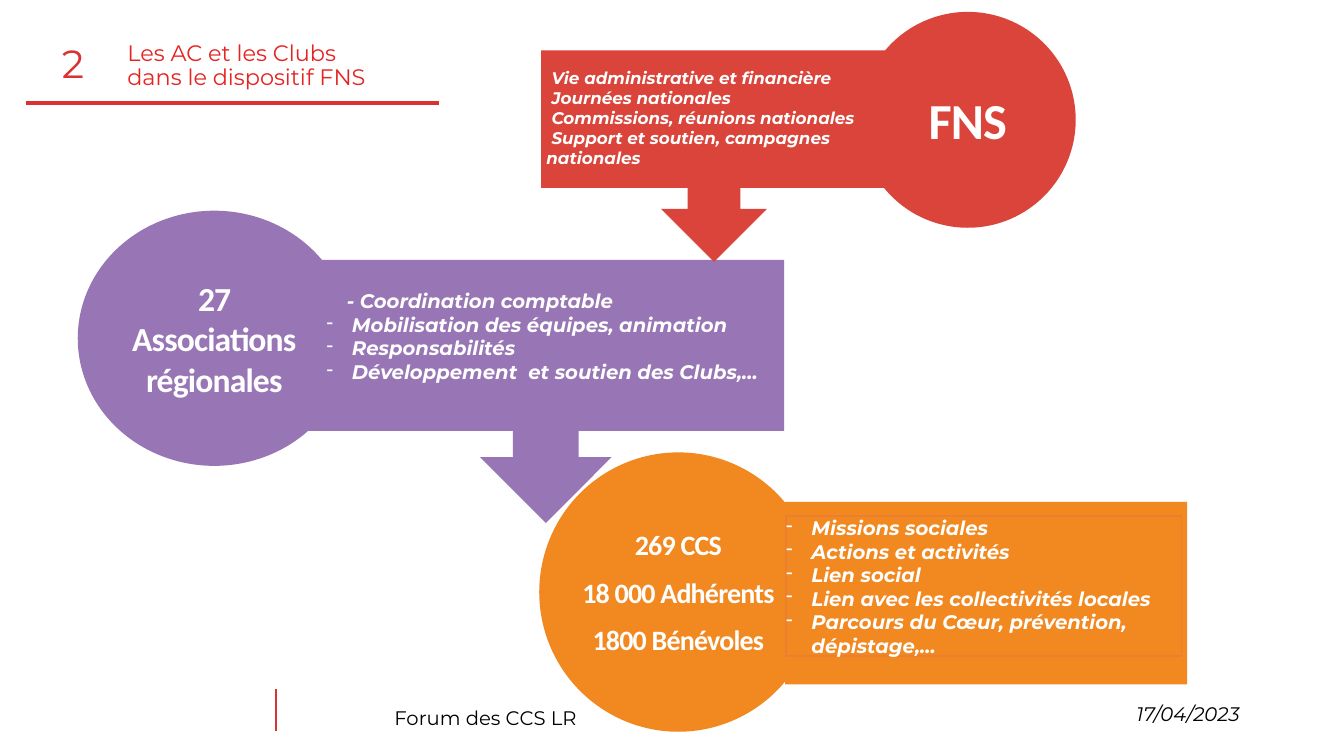
from lxml.etree import SubElement
from pptx import Presentation
from pptx.dml.color import RGBColor
from pptx.enum.shapes import MSO_CONNECTOR, MSO_SHAPE
from pptx.enum.text import MSO_ANCHOR, MSO_AUTO_SIZE, PP_ALIGN
from pptx.oxml.ns import qn
from pptx.util import Cm, Pt

COLOURS = {
    "white": "FFFFFF",
    "black": "000000",
    "rule": "DA3232",
    "title": "E52321",
    "orange": "F18820",
    "outline": "ED7D31",
    "purple": "9876B5",
    "red": "DA443A",
}


def add_block(kind, box, colour):
    shape = slide.shapes.add_shape(kind, *[Cm(length) for length in box])
    shape.shadow.inherit = False
    shape.fill.solid()
    shape.fill.fore_color.rgb = RGBColor.from_string(COLOURS[colour])
    shape.line.fill.background()
    return shape


def write_text(shape, lines, size, colour="white", font="Montserrat", bold=False, italic=False,
               align=PP_ALIGN.LEFT, anchor=MSO_ANCHOR.TOP, inset=0, gap=0, spacing=1.0,
               margin=0, indent=0, bullet_from=None, tracking=0):
    frame = shape.text_frame
    frame.word_wrap = True
    frame.auto_size = MSO_AUTO_SIZE.NONE
    frame.vertical_anchor = anchor
    frame.margin_left = frame.margin_right = Cm(2 * inset)
    frame.margin_top = frame.margin_bottom = Cm(inset)
    frame.text = "\n".join(lines)
    for index, paragraph in enumerate(frame.paragraphs):
        bulleted = bullet_from is not None and index >= bullet_from
        paragraph.alignment = align
        paragraph.line_spacing = spacing
        paragraph.space_before = Pt(gap if index else 0)
        properties = paragraph._p.get_or_add_pPr()
        properties.set("marL", str(Cm(0.64 if bulleted else margin)))
        properties.set("indent", str(Cm(-0.64 if bulleted else indent)))
        if bulleted:
            SubElement(properties, qn("a:buChar")).set("char", "-")
        else:
            SubElement(properties, qn("a:buNone"))
        for run in paragraph.runs:
            run.font.name = font
            run.font.size = Pt(size)
            run.font.bold = bold
            run.font.italic = italic
            run.font.color.rgb = RGBColor.from_string(COLOURS[colour])
            if tracking:
                run._r.get_or_add_rPr().set("spc", str(tracking))


presentation = Presentation()
presentation.slide_width = Cm(33.87)
presentation.slide_height = Cm(19.05)
slide = presentation.slides.add_slide(presentation.slide_layouts[1])

title = slide.shapes.title
number = slide.placeholders[1]
footer = slide.shapes.add_textbox(Cm(9.68), Cm(17.73), Cm(8.03), Cm(1.37))
date = slide.shapes.add_textbox(Cm(28.02), Cm(17.55), Cm(3.84), Cm(0.86))
title.left, title.top, title.width, title.height = Cm(2.95), Cm(0.94), Cm(10.16), Cm(1.04)
number.left, number.top, number.width, number.height = Cm(1.3), Cm(0.99), Cm(1.73), Cm(1.32)

write_text(title, ["Les AC et les Clubs\vdans le dispositif FNS"], 16, "title", inset=0.13, spacing=0.9)
write_text(number, ["2"], 28, "rule", inset=0.13, spacing=0.9)
write_text(footer, ["Forum des CCS LR"], 14, "black", inset=0.13, spacing=0.9)
write_text(date, ["17/04/2023"], 14, "black", italic=True, align=PP_ALIGN.CENTER, inset=0.13)

for start_x, start_y, end_x, end_y, width in [
    (6.96, 17.37, 6.96, 18.42, 1.5),
    (0.66, 2.59, 11.07, 2.59, 2.5),
]:
    rule = slide.shapes.add_connector(
        MSO_CONNECTOR.STRAIGHT, Cm(start_x), Cm(start_y), Cm(end_x), Cm(end_y))
    rule.line.color.rgb = RGBColor.from_string(COLOURS["rule"])
    rule.line.width = Pt(width)
    SubElement(rule._element.spPr, qn("a:effectLst"))

levels = [
    {
        "colour": "orange",
        "panel": (MSO_SHAPE.RECTANGLE, (19.79, 12.65, 10.13, 4.6)),
        "circle": (13.59, 11.4, 7.01, 7.04),
        "name": ["269 CCS", "18 000 Adhérents", "1800 Bénévoles"],
        "name_size": 20,
        "list": (19.81, 13, 9.96, 3.53),
        "tasks": ["Missions sociales", "Actions et activités", "Lien social",
                  "Lien avec les collectivités locales",
                  "Parcours du Cœur, prévention, dépistage,…"],
        "format": {"size": 14, "bullet_from": 0},
    },
    {
        "colour": "purple",
        "panel": (MSO_SHAPE.DOWN_ARROW_CALLOUT, (7.75, 6.55, 12.01, 6.63)),
        "circle": (1.96, 5.31, 6.88, 6.43),
        "name": ["27 Associations\vrégionales"],
        "name_size": 24,
        "list": (8.23, 7.29, 11.66, 3.48),
        "tasks": ["- Coordination comptable", "Mobilisation des équipes, animation",
                  "Responsabilités", "Développement  et soutien des Clubs,…"],
        "format": {"size": 14, "bullet_from": 1, "margin": 0.51},
    },
    {
        "colour": "red",
        "panel": (MSO_SHAPE.DOWN_ARROW_CALLOUT, (13.64, 1.27, 8.71, 5.33)),
        "circle": (21.67, 0.3, 5.44, 5.44),
        "name": ["FNS"],
        "name_size": 36,
        "list": (13.26, 1.7, 8.99, 2.44),
        "tasks": ["Vie administrative et financière", "Journées nationales",
                  "Commissions, réunions nationales",
                  "Support et soutien, campagnes nationales"],
        "format": {"size": 12, "margin": 0.51, "indent": 0.13},
    },
]

for level in levels:
    panel_kind, panel_box = level["panel"]
    add_block(panel_kind, panel_box, level["colour"])
    circle = add_block(MSO_SHAPE.OVAL, level["circle"], level["colour"])
    write_text(circle, level["name"], level["name_size"], font="Calibri", bold=True,
               align=PP_ALIGN.CENTER, anchor=MSO_ANCHOR.MIDDLE, gap=10, tracking=-60)
    if level["colour"] == "orange":
        task_list = add_block(MSO_SHAPE.RECTANGLE, level["list"], "orange")
        task_list.line.color.rgb = RGBColor.from_string(COLOURS["outline"])
        task_list.line.width = Pt(1)
    else:
        task_list = slide.shapes.add_textbox(*[Cm(length) for length in level["list"]])
    write_text(task_list, level["tasks"], bold=True, italic=True, **level["format"])

presentation.save("out.pptx")
